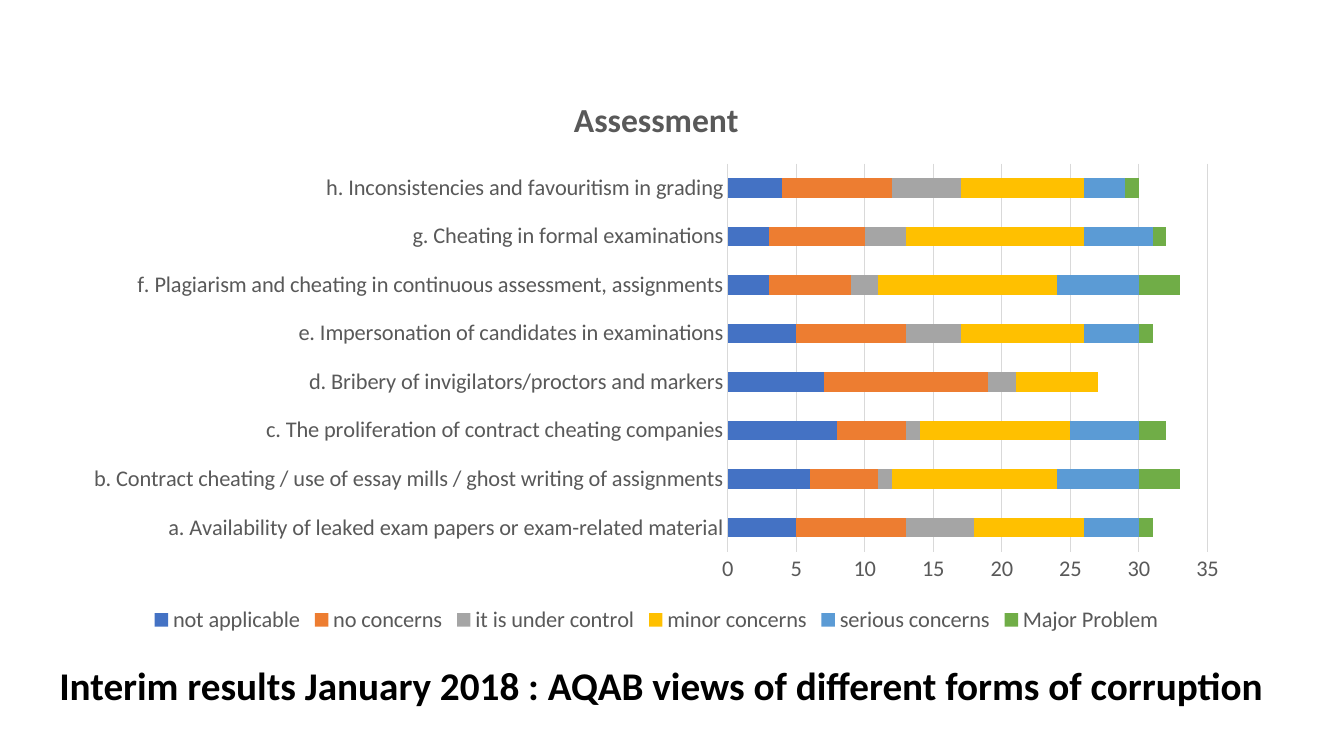
from pptx import Presentation
from pptx.chart.data import CategoryChartData
from pptx.dml.color import RGBColor
from pptx.enum.chart import XL_CHART_TYPE, XL_LEGEND_POSITION, XL_TICK_MARK
from pptx.util import Inches, Pt

FONT = "Calibri"
COLORS = {"black": "000000", "grey": "595959", "rule": "D9D9D9"}
CAPTION = "Interim results January 2018 : AQAB views of different forms of corruption"
CHART_TITLE = "Assessment"
ISSUES = [
    "a. Availability of leaked exam papers or exam-related material",
    "b. Contract cheating / use of essay mills / ghost writing of assignments",
    "c. The proliferation of contract cheating companies",
    "d. Bribery of invigilators/proctors and markers",
    "e. Impersonation of candidates in examinations",
    "f. Plagiarism and cheating in continuous assessment, assignments",
    "g. Cheating in formal examinations",
    "h. Inconsistencies and favouritism in grading",
]
RESPONSES = [
    ("not applicable", "4472C4", (5, 6, 8, 7, 5, 3, 3, 4)),
    ("no concerns", "ED7D31", (8, 5, 5, 12, 8, 6, 7, 8)),
    ("it is under control", "A5A5A5", (5, 1, 1, 2, 4, 2, 3, 5)),
    ("minor concerns", "FFC000", (8, 12, 11, 6, 9, 13, 13, 9)),
    ("serious concerns", "5B9BD5", (4, 6, 5, 0, 4, 6, 5, 3)),
    ("Major Problem", "70AD47", (1, 3, 2, 0, 1, 3, 1, 1)),
]


def rgb(name):
    return RGBColor.from_string(COLORS[name])


def style_font(font, size, color="grey", bold=False):
    font.name = FONT
    font.size = Pt(size)
    font.bold = bold
    font.color.rgb = rgb(color)


def style_rule(line):
    line.color.rgb = rgb("rule")
    line.width = Pt(0.75)


def add_text(page, text, left, top, width, height, **font_format):
    box = page.shapes.add_textbox(*map(Inches, (left, top, width, height)))
    box.text_frame.word_wrap = True
    span = box.text_frame.paragraphs[0].add_run()
    span.text = text
    style_font(span.font, **font_format)


def add_response_chart(page, left, top, width, height):
    data = CategoryChartData()
    data.categories = ISSUES
    for name, _, counts in RESPONSES:
        data.add_series(name, counts)
    chart = page.shapes.add_chart(
        XL_CHART_TYPE.BAR_STACKED, *map(Inches, (left, top, width, height)), data
    ).chart
    style_font(chart.font, 10, "black")

    chart.has_title = True
    title = chart.chart_title
    title.include_in_layout = False
    span = title.text_frame.paragraphs[0].add_run()
    span.text = CHART_TITLE
    style_font(span.font, 24, bold=True)

    chart.has_legend = True
    chart.legend.position = XL_LEGEND_POSITION.BOTTOM
    chart.legend.include_in_layout = False
    style_font(chart.legend.font, 16)

    for axis in (chart.category_axis, chart.value_axis):
        axis.major_tick_mark = XL_TICK_MARK.NONE
        axis.minor_tick_mark = XL_TICK_MARK.NONE
        style_font(axis.tick_labels.font, 16)
    style_rule(chart.category_axis.format.line)
    chart.value_axis.format.line.fill.background()
    chart.value_axis.has_major_gridlines = True
    style_rule(chart.value_axis.major_gridlines.format.line)

    plot = chart.plots[0]
    plot.gap_width = 150
    plot.overlap = 100
    plot.vary_by_categories = False
    for series, (_, color, _) in zip(plot.series, RESPONSES):
        series.invert_if_negative = False
        series.format.fill.solid()
        series.format.fill.fore_color.rgb = RGBColor.from_string(color)


def main():
    deck = Presentation()
    deck.slide_width = Inches(13.33)
    deck.slide_height = Inches(7.5)
    page = deck.slides.add_slide(deck.slide_layouts[6])
    add_text(page, CAPTION, 0.49, 6.51, 12.62, 0.57, size=28, color="black", bold=True)
    add_response_chart(page, 0.7, 0.74, 11.62, 5.59)
    deck.save("out.pptx")


if __name__ == "__main__":
    main()
